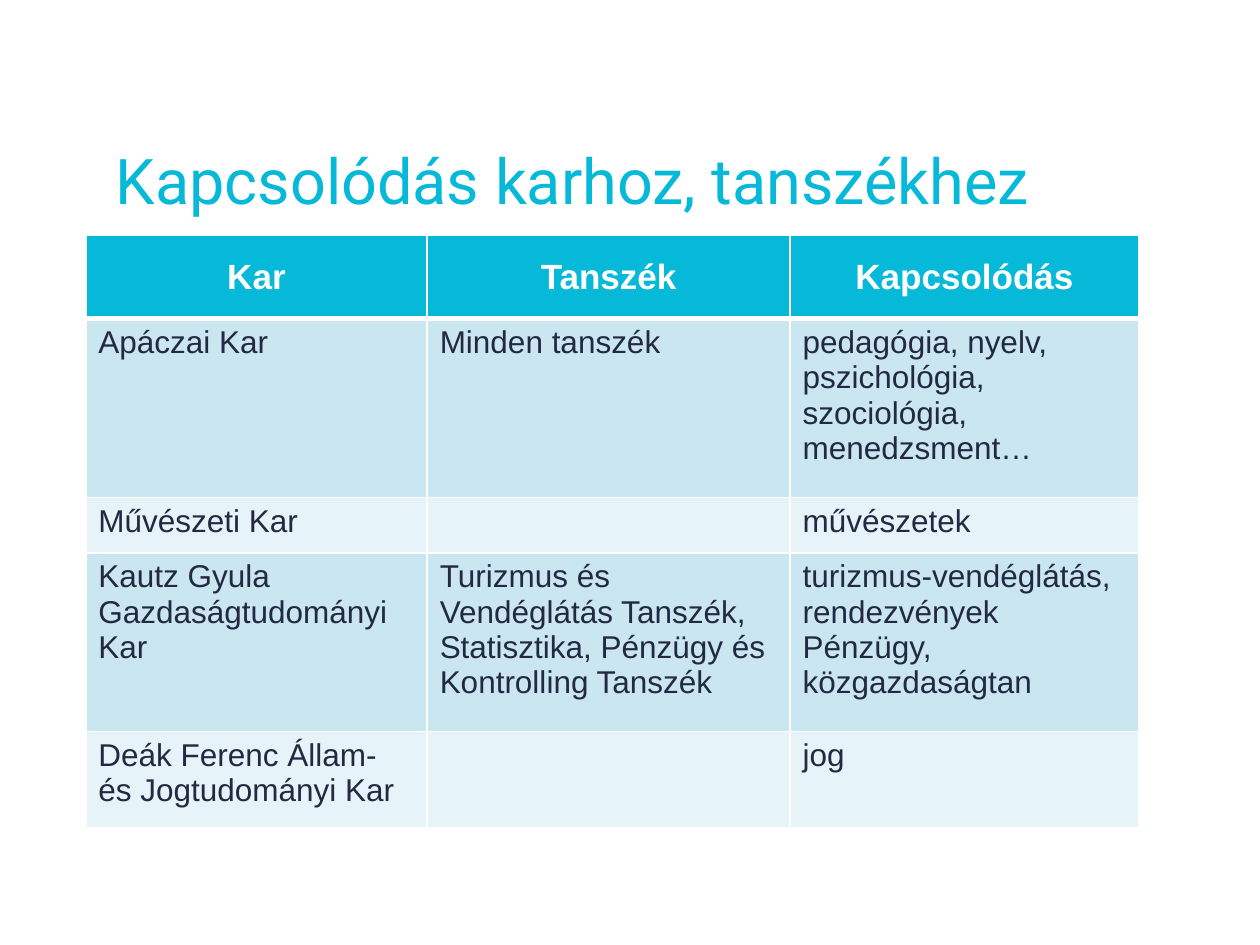
from lxml import etree
from pptx import Presentation
from pptx.dml.color import RGBColor
from pptx.enum.text import MSO_ANCHOR, PP_ALIGN
from pptx.oxml.ns import qn
from pptx.util import Pt

MIDDLE, TOP = MSO_ANCHOR.MIDDLE, MSO_ANCHOR.TOP
CENTER, LEFT = PP_ALIGN.CENTER, PP_ALIGN.LEFT

CYAN = RGBColor(0x07, 0xB9, 0xD9)
DARK = RGBColor(0x24, 0x29, 0x43)
WHITE = RGBColor(0xFF, 0xFF, 0xFF)
BANDS = (RGBColor(0xCA, 0xE6, 0xF1), RGBColor(0xE6, 0xF3, 0xF8))

# Content: each cell is a text, line breaks start a new paragraph
TITLE = "Kapcsolódás karhoz, tanszékhez"
ROWS = [
    ("Kar", "Tanszék", "Kapcsolódás"),
    ("Apáczai Kar", "Minden tanszék",
     "pedagógia, nyelv, pszichológia, szociológia, menedzsment…"),
    ("Művészeti Kar", "", "művészetek"),
    ("Kautz Gyula Gazdaságtudományi Kar",
     "Turizmus és Vendéglátás Tanszék,\nStatisztika, Pénzügy és Kontrolling Tanszék",
     "turizmus-vendéglátás, rendezvények\nPénzügy, közgazdaságtan"),
    ("Deák Ferenc Állam- és Jogtudományi Kar", "", "jog"),
]

# Layout in points
COLUMN_WIDTHS = (195.1, 207.4, 199.4)
ROW_HEIGHTS = (47.5, 102.2, 31.7, 102.2, 54.7)
TABLE_LEFT, TABLE_TOP = 49, 134.6
TITLE_BOX = (59, 83.5, 601.9, 43.2)

TITLE_FONT = {"name": "Roboto", "size": Pt(36)}
HEADER_FONT = {"name": "Arial", "size": Pt(20), "bold": True}
BODY_FONT = {"name": "Arial", "size": Pt(18), "bold": False}


def set_font(paragraph, values, color):
    for name, value in values.items():
        setattr(paragraph.font, name, value)
    paragraph.font.color.rgb = color


def set_borders(cell, widths):
    properties = cell._tc.get_or_add_tcPr()
    for index, (side, width) in enumerate(widths.items()):
        line = etree.Element(qn(f"a:{side}"), w=str(Pt(width)))
        fill = etree.SubElement(line, qn("a:solidFill"))
        etree.SubElement(fill, qn("a:srgbClr"), val=str(WHITE))
        properties.insert(index, line)


presentation = Presentation()
presentation.slide_width, presentation.slide_height = Pt(720), Pt(540)
slide = presentation.slides.add_slide(presentation.slide_layouts[6])

# Table of faculties
table = slide.shapes.add_table(
    len(ROWS), len(COLUMN_WIDTHS), Pt(TABLE_LEFT), Pt(TABLE_TOP),
    Pt(sum(COLUMN_WIDTHS)), Pt(sum(ROW_HEIGHTS))).table
for column, width in zip(table.columns, COLUMN_WIDTHS):
    column.width = Pt(width)
for row, height in zip(table.rows, ROW_HEIGHTS):
    row.height = Pt(height)

for row_index, texts in enumerate(ROWS):
    is_header = row_index == 0
    for column_index, text in enumerate(texts):
        cell = table.cell(row_index, column_index)
        cell.text = text
        cell.vertical_anchor = MIDDLE if is_header else TOP
        cell.fill.solid()
        cell.fill.fore_color.rgb = CYAN if is_header else BANDS[(row_index - 1) % 2]
        set_borders(cell, {"lnL": 1, "lnR": 1,
                           "lnT": 3 if row_index == 1 else 1,
                           "lnB": 3 if is_header else 1})
        for paragraph in cell.text_frame.paragraphs:
            paragraph.alignment = CENTER if is_header else LEFT
            set_font(paragraph, HEADER_FONT if is_header else BODY_FONT,
                     WHITE if is_header else DARK)

# Title
title_frame = slide.shapes.add_textbox(*map(Pt, TITLE_BOX)).text_frame
title_frame.word_wrap = True
title_frame.vertical_anchor = MIDDLE
title_frame.text = TITLE
title_paragraph = title_frame.paragraphs[0]
title_paragraph.line_spacing = 0.9
set_font(title_paragraph, TITLE_FONT, CYAN)

presentation.save("out.pptx")
